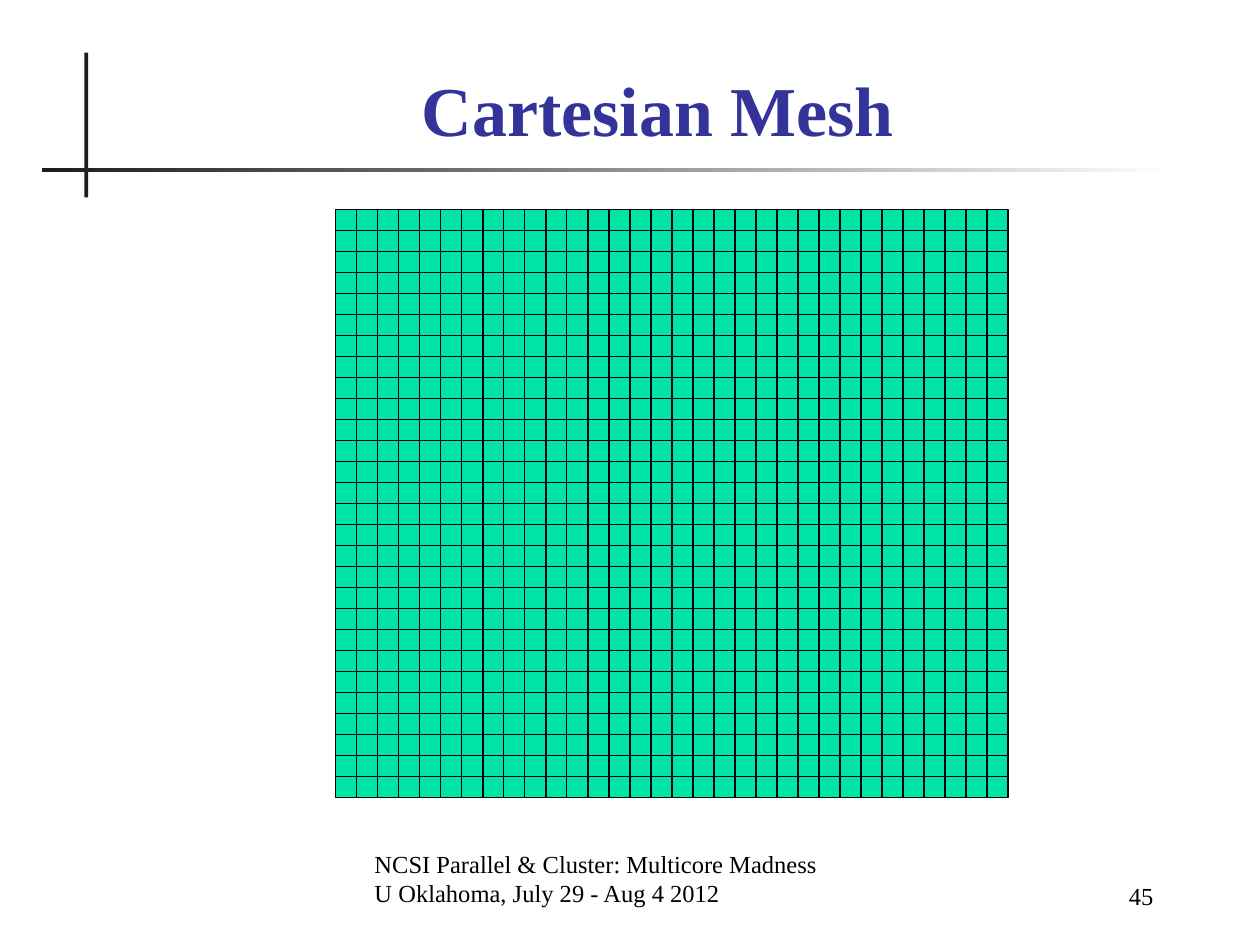
from lxml import etree
from pptx import Presentation
from pptx.dml.color import RGBColor
from pptx.enum import shapes, text
from pptx.oxml.ns import qn
from pptx.util import Cm, Pt

INK = RGBColor(0x1C, 0x1C, 0x1C)
WHITE = RGBColor(0xFF, 0xFF, 0xFF)
BLACK = RGBColor(0, 0, 0)
TITLE_BLUE = RGBColor(0x33, 0x33, 0x99)
MESH_GREEN = RGBColor(0x00, 0xE4, 0xA8)
FONT = "Times New Roman"
COLUMNS, ROWS = 32, 28
GRID_LINE = Pt(0.75)


def add_bar(slide, left, top, width, height):
    bar = slide.shapes.add_shape(
        shapes.MSO_SHAPE.RECTANGLE, left, top, width, height)
    bar.shadow.inherit = False
    bar.line.fill.background()
    bar.fill.solid()
    bar.fill.fore_color.rgb = INK
    return bar


def add_rules(slide, left, top, width, height):
    """Upright bar crossed by a bar that fades to the right."""
    thickness = Cm(0.08)
    add_bar(slide, left + Cm(0.85), top, thickness, height)
    fading = add_bar(slide, left, top + Cm(2.33), width, thickness)
    fading.fill.gradient()
    fading.fill.gradient_angle = 0
    for stop, color in zip(fading.fill.gradient_stops, (INK, WHITE)):
        stop.color.rgb = color


def add_text(slide, left, top, width, height, lines, size, color,
             align=text.PP_ALIGN.LEFT, bold=False):
    frame = slide.shapes.add_textbox(left, top, width, height).text_frame
    frame.word_wrap = True
    frame.vertical_anchor = text.MSO_ANCHOR.BOTTOM
    for i, line in enumerate(lines):
        paragraph = frame.add_paragraph() if i else frame.paragraphs[0]
        paragraph.alignment = align
        run = paragraph.add_run()
        run.text = line
        run.font.name = FONT
        run.font.size = Pt(size)
        run.font.bold = bold
        run.font.color.rgb = color


def add_grid_line(mesh, x1, y1, x2, y2):
    line = mesh.shapes.add_connector(
        shapes.MSO_CONNECTOR.STRAIGHT, x1, y1, x2, y2)
    line.line.color.rgb = BLACK
    line.line.width = GRID_LINE
    etree.SubElement(line._element.spPr, qn("a:effectLst"))
    return line


def add_mesh(slide, left, top, width, height):
    """Green field divided into equal square cells, as one group."""
    mesh = slide.shapes.add_group_shape()
    field = mesh.shapes.add_shape(
        shapes.MSO_SHAPE.RECTANGLE, left, top, width, height)
    field.shadow.inherit = False
    field.fill.solid()
    field.fill.fore_color.rgb = MESH_GREEN
    field.line.color.rgb = BLACK
    field.line.width = GRID_LINE

    for column in range(1, COLUMNS):
        x = left + width * column // COLUMNS
        upright = add_grid_line(mesh, x, top, x, top + height)
        if column * 2 == COLUMNS:
            upright.begin_connect(field, 0)
            upright.end_connect(field, 2)
    for row in range(1, ROWS):
        y = top + height * row // ROWS
        level = add_grid_line(mesh, left, y, left + width, y)
        if row * 2 == ROWS:
            level.begin_connect(field, 1)
            level.end_connect(field, 3)


def main():
    deck = Presentation()
    deck.slide_width, deck.slide_height = Cm(25.4), Cm(19.05)
    slide = deck.slides.add_slide(deck.slide_layouts[6])

    add_rules(slide, Cm(0.85), Cm(1.06), Cm(22.86), Cm(2.92))

    # Footer and slide number
    add_text(slide, Cm(7.3), Cm(17.15), Cm(11.1), Cm(1.27),
             ["NCSI Parallel & Cluster: Multicore Madness",
              "U Oklahoma, July 29 - Aug 4 2012"], 14, BLACK)
    add_text(slide, Cm(19.9), Cm(17.2), Cm(3.6), Cm(1.27),
             ["45"], 14, BLACK, text.PP_ALIGN.RIGHT)

    add_mesh(slide, Cm(6.77), Cm(4.23), Cm(13.55), Cm(11.85))

    # Title
    add_text(slide, Cm(2.12), Cm(1.27), Cm(22.28), Cm(1.88),
             ["Cartesian Mesh"], 40, TITLE_BLUE,
             text.PP_ALIGN.CENTER, bold=True)

    deck.save("out.pptx")


if __name__ == "__main__":
    main()
